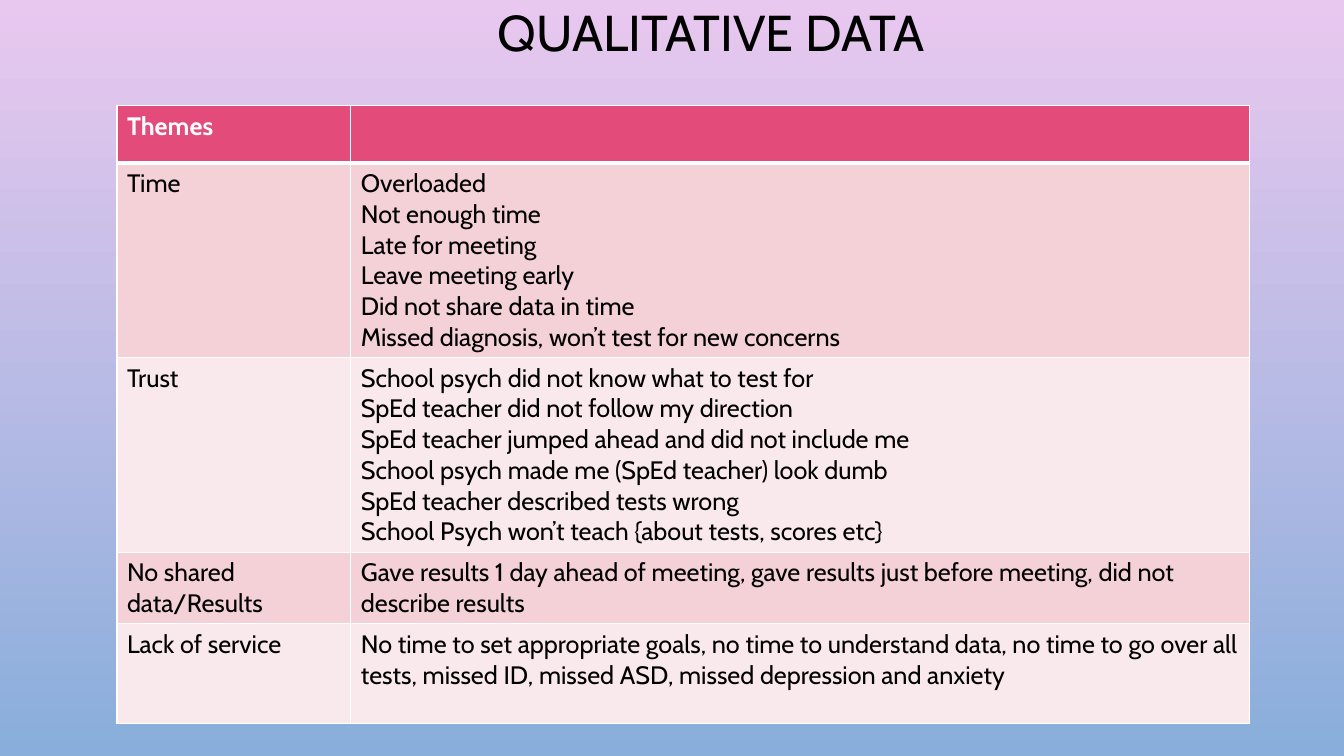
from lxml.etree import SubElement
from pptx import Presentation
from pptx.dml.color import RGBColor
from pptx.enum.text import MSO_ANCHOR as Anchor, PP_ALIGN as Align
from pptx.oxml.ns import qn
from pptx.util import Inches, Pt


def color(hex_string):
    return RGBColor.from_string(hex_string)


def write(frame, text, size=18, ink="000000", bold=False, align=Align.LEFT, spacing=1.0):
    frame.text = text
    for para in frame.paragraphs:
        para.alignment = align
        para.line_spacing = spacing
        para.font.name = "Cabin"
        para.font.size = Pt(size)
        para.font.bold = bold
        para.font.color.rgb = color(ink)


deck = Presentation()
deck.slide_width, deck.slide_height = Inches(13.33), Inches(7.5)
page = deck.slides.add_slide(deck.slide_layouts[6])

# Background: pink at the top to blue at the bottom
backdrop = page.background.fill
backdrop.gradient()
backdrop.gradient_angle = 270
for stop, shade in zip(backdrop.gradient_stops, ("E9C8EF", "89AEDB")):
    stop.color.rgb = color(shade)

# Title
title = page.shapes.add_textbox(Inches(3.48), Inches(0), Inches(7.26), Inches(0.7))
title.text_frame.word_wrap = True
title.text_frame.vertical_anchor = Anchor.MIDDLE
write(title.text_frame, "QUALITATIVE DATA ", size=36, align=Align.CENTER, spacing=0.9)

# Themes and the remarks behind them
themes = [
    ("Themes", []),
    ("Time", [
        "Overloaded",
        "Not enough time",
        "Late for meeting",
        "Leave meeting early",
        "Did not share data in time",
        "Missed diagnosis, won’t test for new concerns",
    ]),
    ("Trust", [
        "School psych did not know what to test for",
        "SpEd teacher did not follow my direction",
        "SpEd teacher jumped ahead and did not include me",
        "School psych made me (SpEd teacher) look dumb",
        "SpEd teacher described tests wrong",
        "School Psych won’t teach {about tests, scores etc}",
    ]),
    ("No shared data/Results", [
        "Gave results 1 day ahead of meeting, gave results just before meeting, "
        "did not describe results",
    ]),
    ("Lack of service", [
        "No time to set appropriate goals, no time to understand data, no time to go "
        "over all tests, missed ID, missed ASD, missed depression and anxiety",
    ]),
]
column_widths = [2.32, 8.91]
row_heights = [0.57, 1.93, 1.93, 0.71, 0.99]

table = page.shapes.add_table(
    len(themes), 2, Inches(1.16), Inches(1.05),
    Inches(sum(column_widths)), Inches(sum(row_heights))).table
for column, width in zip(table.columns, column_widths):
    column.width = Inches(width)

for index, (theme, remarks) in enumerate(themes):
    table.rows[index].height = Inches(row_heights[index])
    header = index == 0
    band = "E34B7A" if header else ("FAE9EC", "F4D0D7")[index % 2]
    for cell, text in zip(table.rows[index].cells, (theme, "\n".join(remarks))):
        write(cell.text_frame, text, ink="FFFFFF" if header else "000000", bold=header)

        # White borders, thicker under the header
        borders = {"lnL": 1, "lnR": 1, "lnT": 3 if index == 1 else 1, "lnB": 3 if header else 1}
        properties = cell._tc.get_or_add_tcPr()
        for side, weight in borders.items():
            line = SubElement(properties, qn(f"a:{side}"), w=str(Pt(weight)))
            SubElement(SubElement(line, qn("a:solidFill")), qn("a:srgbClr"), val="FFFFFF")

        cell.fill.solid()
        cell.fill.fore_color.rgb = color(band)

deck.save("out.pptx")
